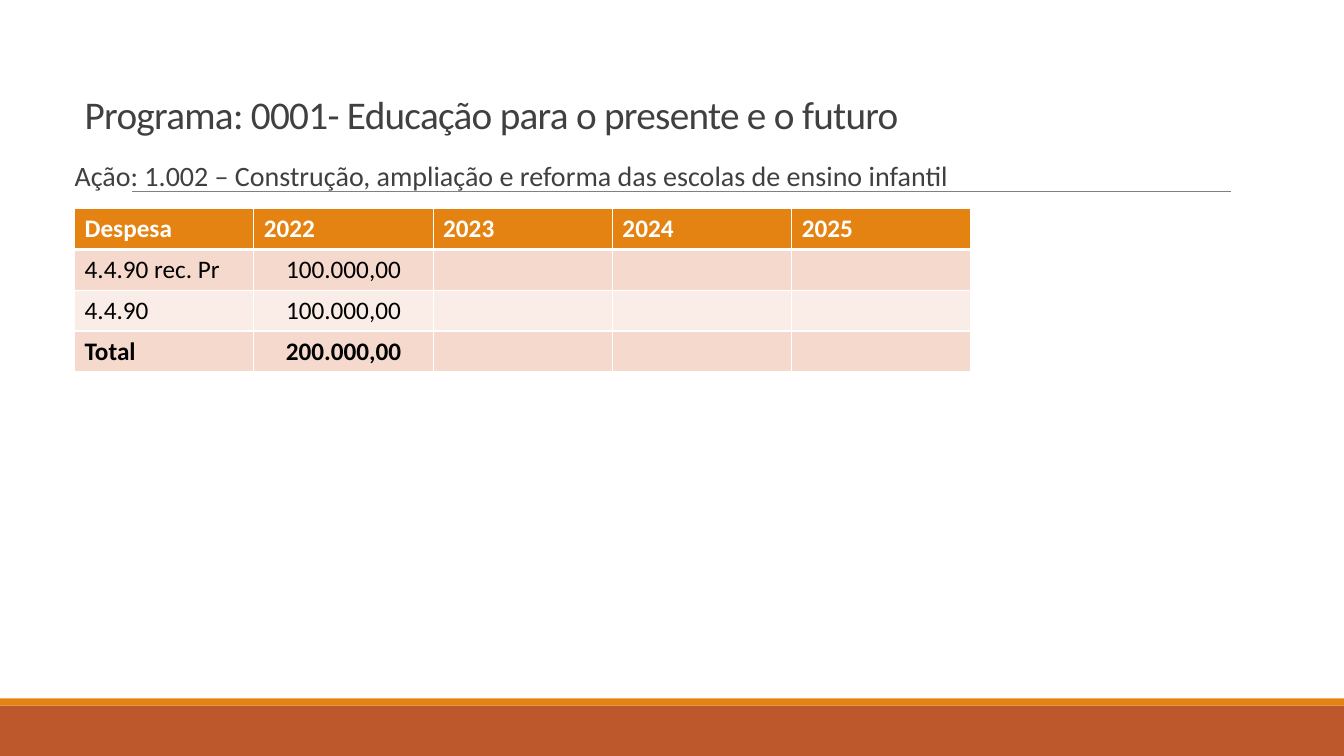
from lxml import etree
from pptx import Presentation
from pptx.dml.color import RGBColor
from pptx.enum.shapes import MSO_CONNECTOR as Connector, MSO_SHAPE as Shape
from pptx.enum.text import MSO_ANCHOR as Anchor, MSO_AUTO_SIZE as AutoSize, PP_ALIGN as Align
from pptx.oxml.ns import qn
from pptx.util import Inches, Pt

COLORS = {
    "orange": "E48312",
    "rust": "BD582C",
    "rule": "808080",
    "text": "404040",
    "black": "000000",
    "white": "FFFFFF",
    "band_dark": "F5D9CC",
    "band_light": "FAEDE7",
}
LEFT = 0.74
TEXT_WIDTH = 9.4
EXPENSES = [
    ["Despesa", "2022", "2023", "2024", "2025"],
    ["4.4.90 rec. Pr", "100.000,00", "", "", ""],
    ["4.4.90", "100.000,00", "", "", ""],
    ["Total", "200.000,00", "", "", ""],
]


def rgb(name):
    return RGBColor.from_string(COLORS[name])


def write_text(frame, text, *, size=18, color="text", bold=False, align=Align.LEFT,
               line_spacing=None, before=0, after=0, tracking=None):
    paragraph = frame.paragraphs[0]
    paragraph.alignment = align
    paragraph.line_spacing = line_spacing
    paragraph.space_before, paragraph.space_after = Pt(before), Pt(after)
    run = paragraph.add_run()
    run.text = text
    run.font.name, run.font.size, run.font.bold = "Calibri", Pt(size), bold
    run.font.color.rgb = rgb(color)
    if tracking is not None:
        run.font._element.set("spc", str(int(tracking * 100)))


def add_band(slide, top, height, color):
    band = slide.shapes.add_shape(Shape.RECTANGLE, 0, Inches(top), Inches(13.33), Inches(height))
    band.shadow.inherit = False
    band.fill.solid()
    band.fill.fore_color.rgb = rgb(color)
    band.line.fill.background()


def add_rule(slide, left, right, top):
    rule = slide.shapes.add_connector(
        Connector.STRAIGHT, Inches(left), Inches(top), Inches(right), Inches(top))
    rule.line.color.rgb = rgb("rule")
    rule.line.width = Pt(0.5)
    etree.SubElement(rule._element.spPr, qn("a:effectLst"))


def set_title(slide, text):
    title = slide.shapes.title
    title.left, title.top = Inches(LEFT), Inches(0.67)
    title.width, title.height = Inches(TEXT_WIDTH), Inches(0.74)
    title.text_frame.auto_size = AutoSize.NONE
    title.text_frame.vertical_anchor = Anchor.BOTTOM
    write_text(title.text_frame, text, size=28, line_spacing=0.85, tracking=-0.5)


def add_action(slide, text):
    action = slide.shapes.add_textbox(Inches(LEFT), Inches(1.56), Inches(TEXT_WIDTH), Inches(5.04))
    frame = action.text_frame
    frame.word_wrap = True
    frame.margin_left = frame.margin_right = 0
    write_text(frame, text, size=20, line_spacing=0.9, before=12, after=2)


def set_borders(cell, widths):
    """Draw white borders; widths maps each side to points."""
    properties = cell._tc.get_or_add_tcPr()
    for position, (side, width) in enumerate(widths.items()):
        border = etree.Element(qn(f"a:ln{side}"), w=str(Pt(width)))
        fill = etree.SubElement(border, qn("a:solidFill"))
        etree.SubElement(fill, qn("a:srgbClr"), val=COLORS["white"])
        properties.insert(position, border)


def add_expense_table(slide, rows):
    table = slide.shapes.add_table(
        len(rows), len(rows[0]), Inches(LEFT), Inches(2.07), Inches(8.89), Inches(1.62)).table
    for r, row in enumerate(rows):
        header, total = r == 0, r == len(rows) - 1
        band = "orange" if header else "band_dark" if r % 2 else "band_light"
        for c, value in enumerate(row):
            cell = table.cell(r, c)
            cell.fill.solid()
            cell.fill.fore_color.rgb = rgb(band)
            set_borders(cell, {"L": 1, "R": 1, "T": 3 if r == 1 else 1, "B": 3 if header else 1})
            if value:
                write_text(cell.text_frame, value, bold=header or total,
                           color="white" if header else "black",
                           align=Align.CENTER if c and not header else Align.LEFT)


def main():
    deck = Presentation()
    deck.slide_width, deck.slide_height = Inches(13.33), Inches(7.5)
    slide = deck.slides.add_slide(deck.slide_layouts[5])

    # Footer bands and heading rule
    add_band(slide, 7, 0.5, "rust")
    add_band(slide, 6.93, 0.07, "orange")
    add_rule(slide, 1.31, 12.21, 1.9)

    # Programme, action and expenses
    set_title(slide, "Programa: 0001- Educação para o presente e o futuro")
    add_action(slide, "Ação: 1.002 – Construção, ampliação e reforma das escolas de ensino infantil")
    add_expense_table(slide, EXPENSES)

    deck.save("out.pptx")


if __name__ == "__main__":
    main()
